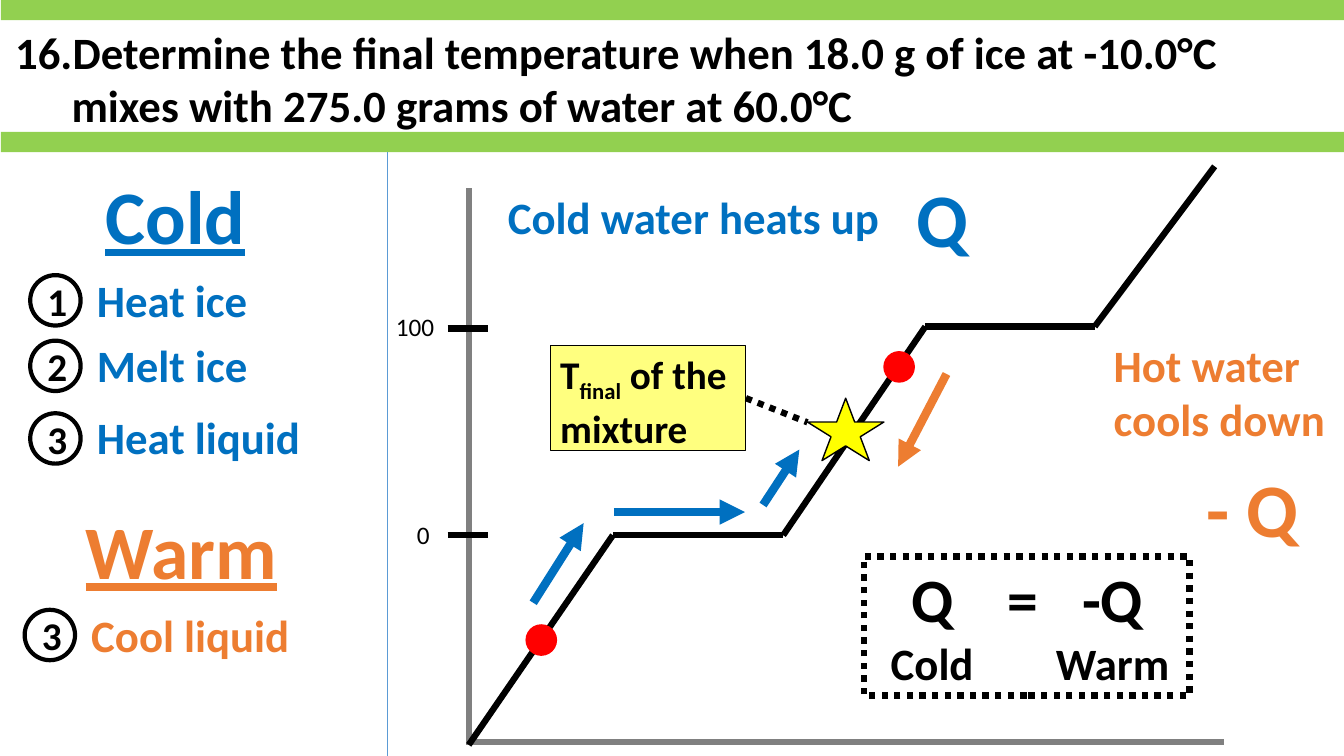
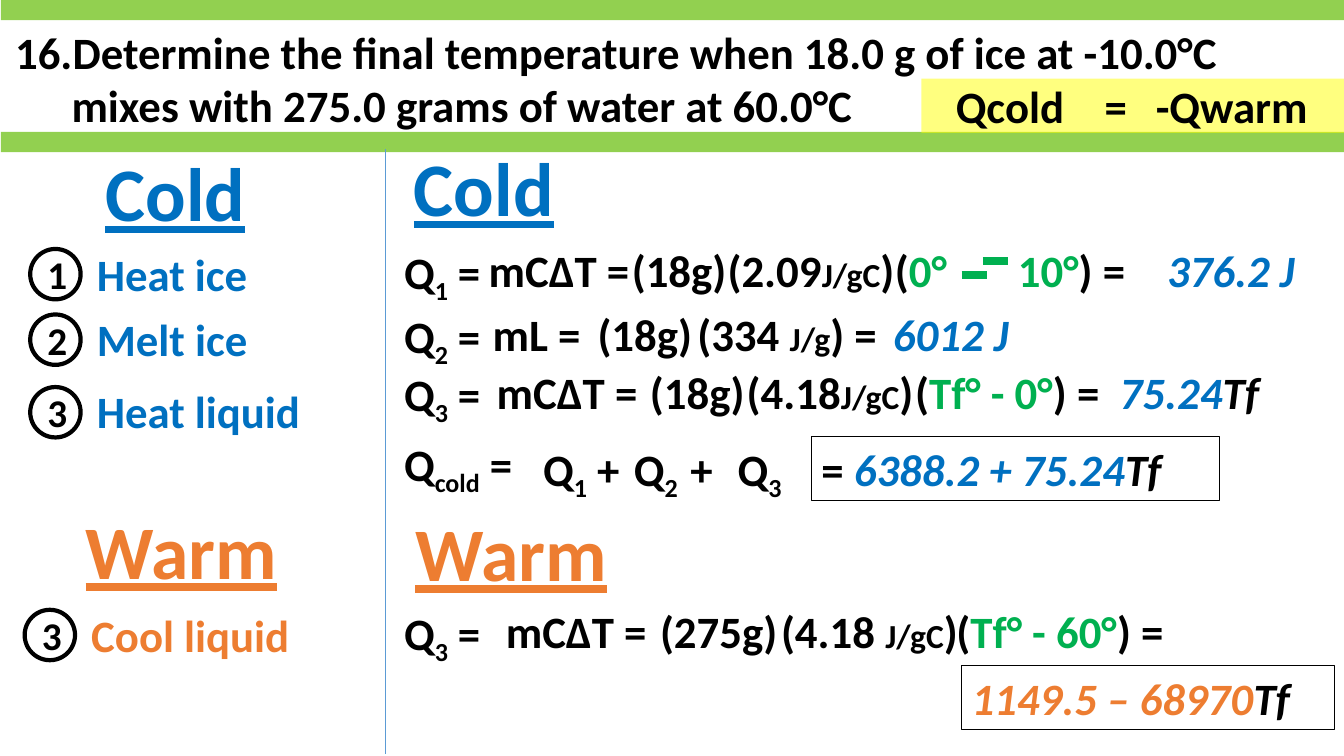
import dataclasses
import itertools

import lxml.etree
import pptx
import pptx.dml.color
import pptx.enum.dml
import pptx.enum.shapes
import pptx.enum.text
import pptx.oxml.ns
import pptx.util

SHAPE = pptx.enum.shapes.MSO_SHAPE
ALIGN = pptx.enum.text.PP_ALIGN
ANCHOR = pptx.enum.text.MSO_ANCHOR
qn = pptx.oxml.ns.qn


@dataclasses.dataclass(frozen=True)
class Theme:
    """Colours, type sizes and line widths of the deck."""
    font: str = "Calibri"
    black: str = "000000"
    white: str = "FFFFFF"
    band: str = "92D050"
    cold: str = "0070C0"
    warm: str = "ED7D31"
    change: str = "00B050"
    axis: str = "808080"
    divider: str = "5B9BD5"
    marker: str = "FF0000"
    highlight: str = "FFFF00"
    heading: int = 54
    formula: int = 44
    body: int = 32
    badge: int = 28
    unit: int = 24
    label: int = 18
    hairline: float = 0.5
    frame: float = 0.75
    outline: float = 1
    ring: float = 3
    stroke: float = 4.5
    arrow: float = 6
    line_height: float = 1.22


@dataclasses.dataclass(frozen=True)
class Span:
    """A stretch of text whose style departs from its paragraph."""
    text: str
    color: str = None
    size: int = None
    italic: bool = False
    sub: bool = False


THEME = Theme()
QUESTION = ("Determine the final temperature when 18.0 g of ice at -10.0°C "
            "mixes with 275.0 grams of water at 60.0°C")


def sub(text):
    return Span(text, sub=True)


def unit(text):
    return Span(text, size=THEME.unit)


def change(text):
    return Span(text, color=THEME.change)


def result(text, color=THEME.cold):
    return Span(text, color=color, italic=True)


class Board:
    """Draws on the current slide, on a grid of tenth-inch columns and rows."""
    columns, rows = 133.33, 75

    def __init__(self, theme):
        self.theme = theme
        self.cell = pptx.util.Inches(0.1)
        self.deck = pptx.Presentation()
        self.deck.slide_width, self.deck.slide_height = self.grid(self.columns, self.rows)
        self.page = None

    def grid(self, *lengths):
        return [round(length * self.cell) for length in lengths]

    def color(self, value):
        return pptx.dml.color.RGBColor.from_string(value)

    def style(self, para, color, size, bold=True, align=ALIGN.LEFT, spans=()):
        para.alignment = align
        for run, span in itertools.zip_longest(para.runs, spans):
            span = span if isinstance(span, Span) else Span("")
            font = run.font
            font.name, font.bold = self.theme.font, bold
            font.size = pptx.util.Pt(span.size or size)
            font.color.rgb = self.color(span.color or color)
            if span.italic:
                font.italic = True
            if span.sub:
                font._element.set("baseline", "-25000")

    def wording(self, para, content, color=THEME.black, size=THEME.body, bold=True,
                align=ALIGN.LEFT, tabs=(), tab_kind="l"):
        if isinstance(content, str):
            para.text = content
            spans = ()
        else:
            spans = content
            for span in spans:
                para.add_run().text = span.text if isinstance(span, Span) else span
        if tabs:
            stops = lxml.etree.SubElement(para._p.get_or_add_pPr(), qn("a:tabLst"))
            for stop in self.grid(*tabs):
                lxml.etree.SubElement(stops, qn("a:tab"), pos=str(stop), algn=tab_kind)
        self.style(para, color, size, bold, align, spans)

    def placeholder(self, holder, at):
        holder.left, holder.top, holder.width, holder.height = self.grid(*at)
        frame = holder.text_frame
        frame.word_wrap = True
        frame.auto_size = pptx.enum.text.MSO_AUTO_SIZE.NONE
        frame.vertical_anchor = ANCHOR.TOP
        return frame

    def bullet(self, para, indent=0, start=None):
        step = self.grid(indent)[0]
        props = para._p.get_or_add_pPr()
        props.set("marL", str(step))
        props.set("indent", str(-step))
        if start is None:
            lxml.etree.SubElement(props, qn("a:buNone"))
        else:
            lxml.etree.SubElement(props, qn("a:buFont"), typeface="+mj-lt")
            lxml.etree.SubElement(props, qn("a:buAutoNum"), type="arabicPeriod",
                                  startAt=str(start))

    def new_page(self, question, number):
        self.page = self.deck.slides.add_slide(self.deck.slide_layouts[3])
        for top in (0, 13.1):
            self.shape(SHAPE.RECTANGLE, (0.1, top, self.columns, 2), fill=self.theme.band)
        frame = self.placeholder(self.page.shapes.title, (0.5, 1.9, 131.3, 11.8))
        para = frame.paragraphs[0]
        self.wording(para, question)
        self.bullet(para, 5.6, number)

    def text(self, at, content, **style):
        box = self.page.shapes.add_textbox(*self.grid(*at))
        box.text_frame.word_wrap = True
        self.wording(box.text_frame.paragraphs[0], content, **style)

    def shape(self, kind, at, fill=None, line=None, width=1, alpha=None, dotted=False):
        shape = self.page.shapes.add_shape(kind, *self.grid(*at))
        shape.shadow.inherit = False
        if fill:
            shape.fill.solid()
            shape.fill.fore_color.rgb = self.color(fill)
        else:
            shape.fill.background()
        if alpha:
            tint = shape._element.spPr.find(".//" + qn("a:srgbClr"))
            lxml.etree.SubElement(tint, qn("a:alpha"), val=str(alpha * 1000))
        if line:
            self.pen(shape.line, line, width, dotted)
        else:
            shape.line.fill.background()
        shape.text_frame.word_wrap = True
        shape.text_frame.vertical_anchor = ANCHOR.TOP
        return shape

    def pen(self, line, color, width, dotted=False):
        line.color.rgb = self.color(color)
        line.width = pptx.util.Pt(width)
        if dotted:
            line.dash_style = pptx.enum.dml.MSO_LINE.ROUND_DOT

    def line(self, start, end, color=THEME.black, width=THEME.stroke,
             arrow=False, dotted=False, source=None):
        link = self.page.shapes.add_connector(
            pptx.enum.shapes.MSO_CONNECTOR.STRAIGHT, *self.grid(*start, *end))
        if source is not None:
            link.begin_connect(source, 3)
        self.pen(link.line, color, width, dotted)
        if arrow:
            lxml.etree.SubElement(link.line._get_or_add_ln(), qn("a:tailEnd"), type="triangle")
        lxml.etree.SubElement(link._element.spPr, qn("a:effectLst"))

    def heading(self, left, top, content, color, width):
        box = (left, top, width, 10.1)
        self.text(box, content, color=color, size=self.theme.heading, align=ALIGN.CENTER)
        for run in self.page.shapes[-1].text_frame.paragraphs[0].runs:
            run.font.underline = True

    def steps(self, index, left, top, color, items, first=1, gaps=()):
        frame = self.placeholder(self.page.placeholders[index],
                                 (left, top, 24, 6.4 + sum(gaps)))
        frame.text = "\n".join(items)
        tops = itertools.accumulate((0, *gaps))
        line_points = self.theme.body * self.theme.line_height
        for number, (para, gap, offset) in enumerate(
                zip(frame.paragraphs, (0, *gaps), tops), first):
            self.bullet(para)
            para.space_before = pptx.util.Pt(round(max(0, gap * 7.2 - line_points), 1))
            self.style(para, color, self.theme.body)
            badge = self.shape(SHAPE.OVAL, (left - 5.6, top + 0.7 + offset, 5, 5),
                               self.theme.white, self.theme.black, self.theme.ring)
            badge.text_frame.vertical_anchor = ANCHOR.MIDDLE
            self.wording(badge.text_frame.paragraphs[0], str(number),
                         size=self.theme.badge, align=ALIGN.CENTER)

    def plan(self, heading_top, list_top, divider):
        theme = self.theme
        self.line((divider[0], divider[1]), (divider[0], divider[1] + 60),
                  theme.divider, theme.hairline)
        self.heading(5.4, heading_top, "Cold", theme.cold, 24)
        self.heading(5, 49.5, "Warm", theme.warm, 26)
        self.steps(1, 8.6, list_top, theme.cold,
                   ("Heat ice", "Melt ice", "Heat liquid"), gaps=(6.5, 7.2))
        self.steps(2, 8.05, 59.8, theme.warm, ("Cool liquid",), first=3)

    def equation(self, top, number, pieces):
        self.text((39.1, top + 0.2, 13, 6.4), ("Q", sub(number), " ="))
        for left, width, content in pieces:
            self.text((left, top, width, 6.4), content)


def draw_curve(board):
    theme = board.theme
    board.new_page(QUESTION, 16)
    board.line((46.5, 18.7), (46.5, 73.9), theme.axis)
    board.line((121.4, 73.6), (46.4, 73.6), theme.axis)
    for top in (32.6, 53.1):
        board.line((44.4, top), (48.4, top))
    board.text((38.3, 30.4, 7.7, 4), "100", size=theme.label, bold=False)
    board.text((39, 51, 4.6, 4), "0", size=theme.label, bold=False, align=ALIGN.RIGHT)
    board.plan(16.3, 26.6, (38.4, 15.1))

    curve = ((46.5, 73.9), (60.8, 53.1), (77.7, 53.1),
             (91.8, 32.4), (108.6, 32.4), (120.5, 16.5))
    for start, end in itertools.pairwise(curve):
        board.line(start, end)
    for start, end, color in (((52.9, 59.8), (57.9, 51.9), theme.cold),
                              ((60.9, 50.8), (73.9, 50.8), theme.cold),
                              ((75.7, 50.1), (79.3, 44.6), theme.cold),
                              ((93.9, 37.1), (89.1, 46.3), theme.warm)):
        board.line(start, end, color, theme.arrow, arrow=True)
    for left, top in ((52.2, 62), (87.7, 34.9)):
        board.shape(SHAPE.OVAL, (left, top, 3, 3), theme.marker, theme.marker, theme.outline)
    board.shape(SHAPE.STAR_5_POINT, (80.1, 39.5, 7.6, 6.2),
                theme.highlight, theme.black, theme.outline)

    board.text((49.4, 18.3, 40.5, 6.4), "Cold water heats up", color=theme.cold)
    board.text((109.5, 33, 24.3, 11.8), "Hot water \vcools down", color=theme.warm)
    board.text((89.9, 16.6, 8.4, 10.1), "Q", color=theme.cold, size=theme.heading)
    board.text((118.7, 45.3, 14.8, 10.1), "- Q", color=theme.warm, size=theme.heading)

    note = board.shape(SHAPE.RECTANGLE, (54.6, 34.3, 19.4, 10.4), theme.highlight,
                       theme.black, theme.frame, alpha=50)
    board.wording(note.text_frame.paragraphs[0], ("T", sub("final"), " of the mixture"),
                  size=theme.badge)
    board.line((74, 39.5), (80.1, 41.9), dotted=True, source=note)

    balance = board.shape(SHAPE.RECTANGLE, (85.7, 55.2, 32.3, 13.8), line=theme.black,
                          width=theme.stroke, dotted=True).text_frame
    stops = (5.8, 14.8, 23.7)
    board.wording(balance.paragraphs[0], "\tQ\t=\t-Q", size=theme.formula,
                  tabs=stops, tab_kind="ctr")
    board.wording(balance.add_paragraph(), "\tCold\t\tWarm", tabs=stops, tab_kind="ctr")


def draw_solution(board):
    theme = board.theme
    board.new_page(QUESTION, 16)
    board.plan(14, 24, (38.2, 14.8))
    balance = board.shape(SHAPE.RECTANGLE, (91.4, 7.8, 42, 5.4), theme.highlight, alpha=50)
    frame = balance.text_frame
    frame.margin_left = frame.margin_right = frame.margin_top = frame.margin_bottom = 0
    board.wording(frame.paragraphs[0], "\tQcold\t=\t-Qwarm",
                  tabs=(8.8, 19.3, 30.8), tab_kind="ctr")
    board.heading(36, 13.5, "Cold", theme.cold, 24)
    board.heading(37.7, 49.7, "Warm", theme.warm, 26)

    tf = Span("Tf", italic=True)
    board.equation(23.6, "1", (
        (47.5, 17, "mC∆T ="), (61.7, 16, "(18g)"),
        (71.2, 19.8, ("(2.09", unit("J/gC"), ")")),
        (114.8, 19.7, (result("376.2 J"),))))
    board.text((87.8, 23.6, 27, 6.4), ("(", change("0°\t10°"), ") ="), tabs=(12.2,))
    for left, top in ((97.5, 25.9), (95.4, 27.3)):
        board.line((left, top), (left + 2.5, top), theme.change, theme.arrow)
    board.equation(29.9, "2", (
        (47.9, 13, "mL ="), (58.3, 16, "(18g)"),
        (68.2, 24.7, ("(334 ", unit("J/g"), ") =")),
        (87.6, 20.9, (result("6012 J"),))))
    board.equation(35.7, "3", (
        (48.3, 17, "mC∆T ="), (63.5, 16, "(18g)"),
        (73.1, 20.3, ("(4.18", unit("J/gC"), ")")),
        (89.8, 24.8, ("(", change("Tf° - 0°"), ") =")),
        (110.1, 20.9, (result("75.24"), tf))))
    board.equation(59.4, "3", (
        (49.2, 17, "mC∆T ="), (64.5, 16, "(275g)"),
        (76.5, 20.9, ("(4.18 ", unit("J/gC"), ")")),
        (93.9, 24.8, ("(", change("Tf° - 60°"), ") ="))))

    board.text((39.1, 42.8, 15.5, 6.4), ("Q", sub("cold"), " ="))
    board.text((52.9, 43.3, 27.6, 6.4),
               ("Q", sub("1"), " +\tQ", sub("2"), "\t+\tQ", sub("3")), tabs=(9, 14.6, 19.3))
    for at, content in (((80.5, 43.3, 40.5, 6.4), ("= ", result("6388.2 + 75.24"), tf)),
                        ((95.4, 66, 37, 6.4), (result("1149.5 – 68970", theme.warm), tf))):
        total = board.shape(SHAPE.RECTANGLE, at, line=theme.black, width=theme.frame)
        board.wording(total.text_frame.paragraphs[0], content)


def main():
    board = Board(THEME)
    draw_curve(board)
    draw_solution(board)
    board.deck.save("out.pptx")


if __name__ == "__main__":
    main()
